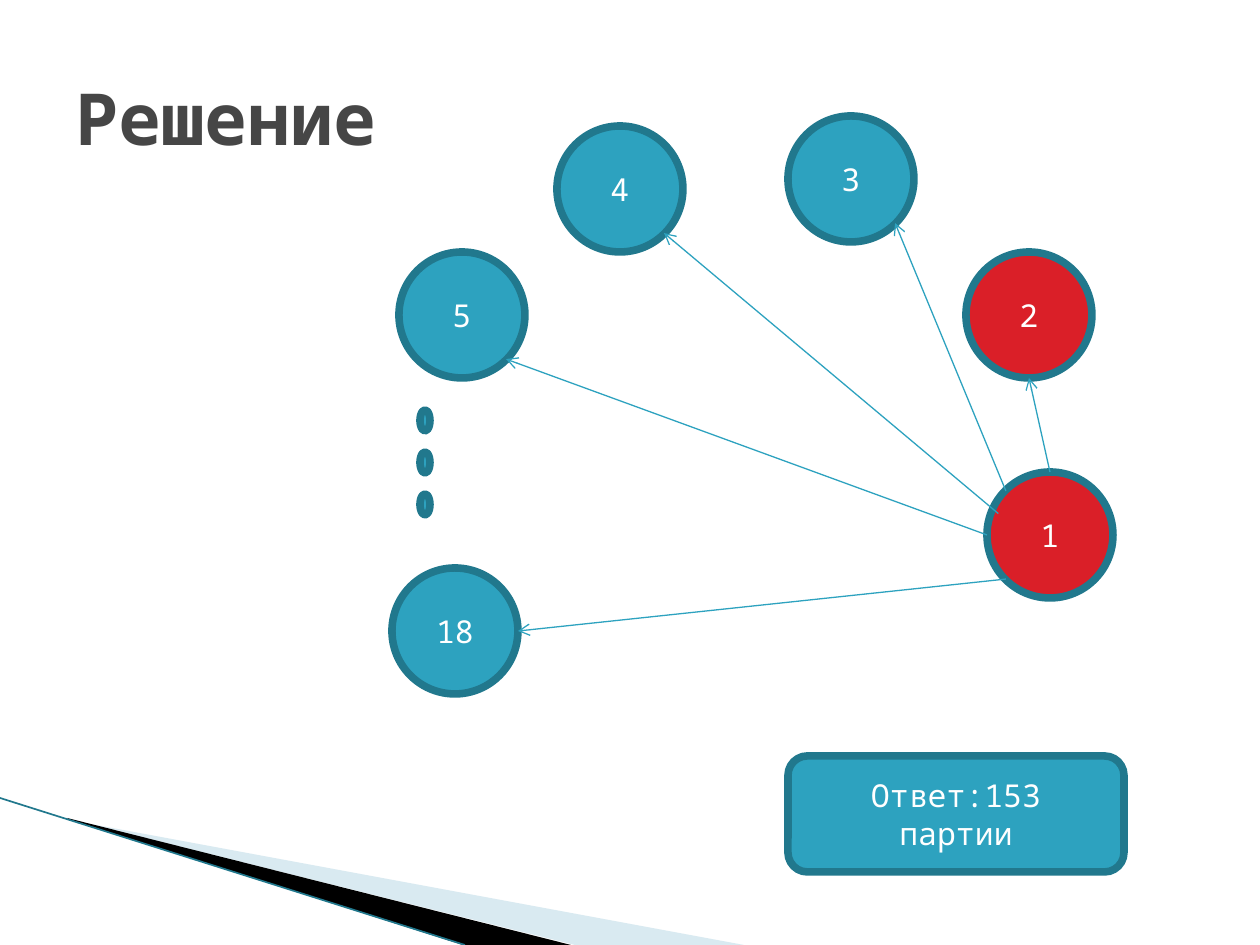
from lxml import etree
from pptx import Presentation
from pptx.dml.color import RGBColor
from pptx.enum.shapes import MSO_CONNECTOR, MSO_SHAPE
from pptx.enum.text import MSO_ANCHOR, PP_ALIGN
from pptx.oxml.ns import qn
from pptx.util import Pt

OVAL, ROUNDED = MSO_SHAPE.OVAL, MSO_SHAPE.ROUNDED_RECTANGLE
STRAIGHT = MSO_CONNECTOR.STRAIGHT
CENTER, LEFT = PP_ALIGN.CENTER, PP_ALIGN.LEFT
MIDDLE = MSO_ANCHOR.MIDDLE

# Content
TITLE = "Решение"
ANSWER = "Ответ:153 партии"
FONT = "Noto Sans Mono"
COLORS = {"teal": "2DA2BF", "edge": "21788D", "red": "DA1F28", "title": "464646",
          "white": "FFFFFF", "pale": "A0CBDC", "black": "000000"}
PLAYERS = {  # number: left, top, fill
    "2": (966, 252, "red"),
    "3": (788, 116, "teal"),
    "4": (557, 126, "teal"),
    "5": (399, 252, "teal"),
    "1": (987, 472, "red"),
    "18": (392, 568, "teal"),
}
ANCHORS = {  # fractions of a circle's box
    "top": (0.5, 0), "bottom": (0.5, 1), "left": (0, 0.5), "right": (1, 0.5),
    "top left": (0.15, 0.15), "bottom left": (0.15, 0.85),
    "bottom right": (0.85, 0.85), "upper left": (0.09, 0.33),
}
GAMES = [  # anchor on player 1, opponent, anchor on the opponent
    ("top", "2", "bottom"),
    ("top left", "3", "bottom right"),
    ("upper left", "4", "bottom right"),
    ("left", "5", "bottom right"),
    ("bottom left", "18", "right"),
]
WEDGES = [  # colour, opacity in percent, corners
    ("pale", 40, [(69, 820), (744, 945), (575, 945), (69, 819)]),
    ("black", 100, [(67, 818), (571, 945), (463, 945), (68, 819)]),
]

SCALE = 914400 / 126
CIRCLE = 126
DOT_X, DOT_Y, DOT_W, DOT_H, DOT_STEP, DOT_COUNT = 420, 410, 10, 21, 42, 3


def px(*lengths):
    return [round(v * SCALE) for v in lengths]


def rgb(name):
    return RGBColor.from_string(COLORS[name])


def write(sp, text, size, color, align, bold=False):
    tf = sp.text_frame
    tf.word_wrap = True
    tf.vertical_anchor = MIDDLE
    p = tf.paragraphs[0]
    p.text = text
    p.alignment = align
    p.font.name, p.font.size, p.font.bold = FONT, Pt(size), bold
    p.font.color.rgb = rgb(color)


def add_node(kind, box, fill, text=""):
    sp = s.shapes.add_shape(kind, *px(*box))
    sp.shadow.inherit = False
    sp.fill.solid()
    sp.fill.fore_color.rgb = rgb(fill)
    sp.line.color.rgb = rgb("edge")
    sp.line.width = Pt(4.33)
    if text:
        write(sp, text, 18, "white", CENTER)


def add_line(start, end, color, width, arrow=False):
    cxn = s.shapes.add_connector(STRAIGHT, *px(*start, *end))
    cxn.line.color.rgb = rgb(color)
    cxn.line.width = Pt(width)
    if arrow:
        etree.SubElement(cxn.line._get_or_add_ln(), qn("a:tailEnd"), type="arrow")
    etree.SubElement(cxn._element.spPr, qn("a:effectLst"))


def anchor(player, side):
    left, top, _ = PLAYERS[player]
    fx, fy = ANCHORS[side]
    return left + fx * CIRCLE, top + fy * CIRCLE


prs = Presentation()
prs.slide_width, prs.slide_height = px(1260, 945)
s = prs.slides.add_slide(prs.slide_layouts[5])

# Corner decoration
for color, opacity, corners in WEDGES:
    builder = s.shapes.build_freeform(*corners[0], scale=SCALE)
    builder.add_line_segments(corners[1:], close=True)
    sp = builder.convert_to_shape()
    sp.shadow.inherit = False
    sp.fill.solid()
    sp.fill.fore_color.rgb = rgb(color)
    sp.line.fill.background()
    if opacity < 100:
        clr = sp._element.spPr.find(qn("a:solidFill"))[0]
        etree.SubElement(clr, qn("a:alpha"), val=str(opacity * 1000))
add_line((0, 798), (465, 945), "edge", 0.95)

# Title
title = s.shapes.title
title.left, title.top, title.width, title.height = px(63, 38, 1134, 157)
write(title, TITLE, 41, "title", LEFT, bold=True)

# Players and the dots for those left out
for number, (left, top, fill) in PLAYERS.items():
    add_node(OVAL, (left, top, CIRCLE, CIRCLE), fill, number)
for i in range(DOT_COUNT):
    add_node(OVAL, (DOT_X, DOT_Y + i * DOT_STEP, DOT_W, DOT_H), "teal")

# Games of player 1
for side, opponent, target in GAMES:
    add_line(anchor("1", side), anchor(opponent, target), "teal", 0.75, arrow=True)

# Answer
add_node(ROUNDED, (788, 756, 336, 116), "teal", ANSWER)

prs.save("out.pptx")
